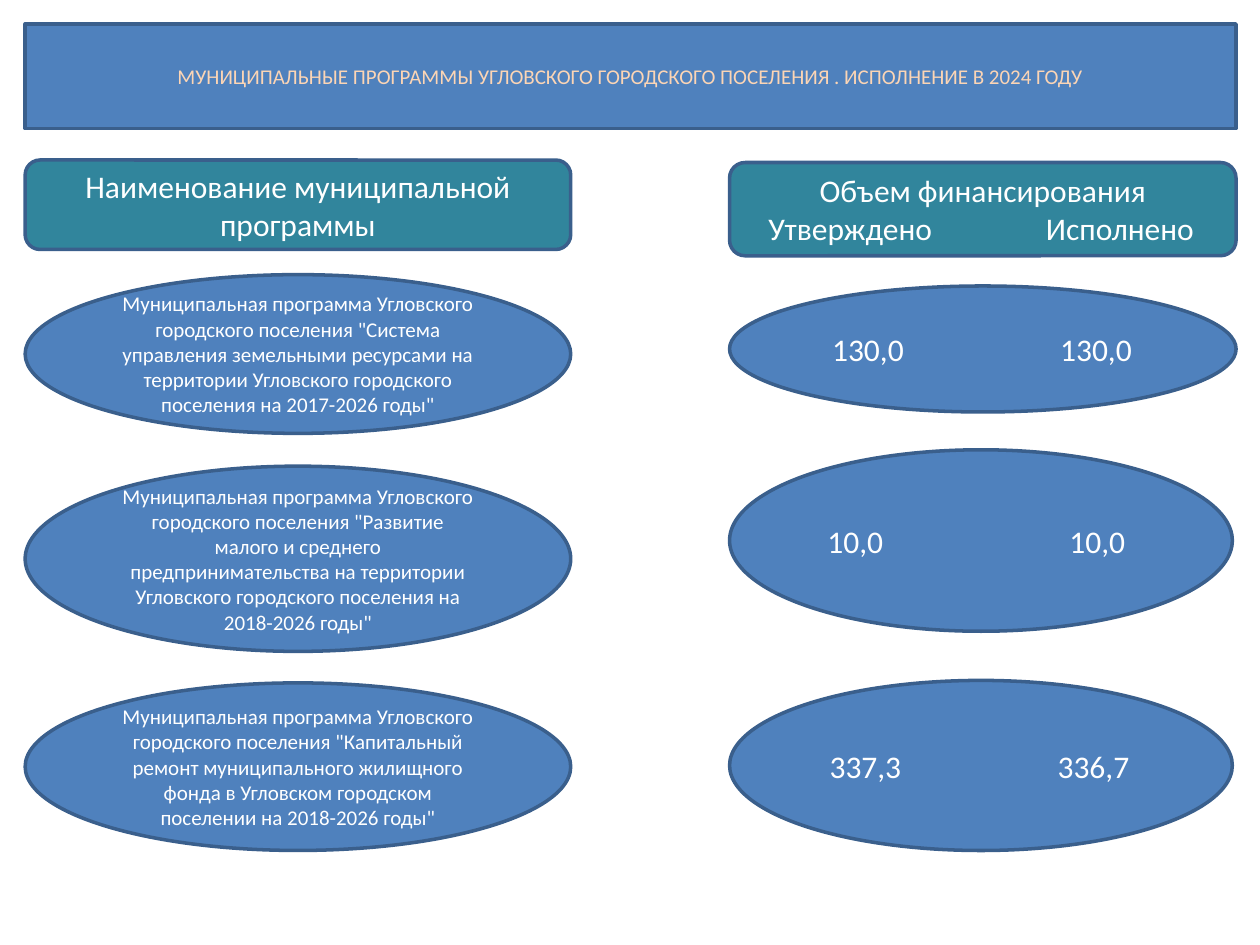
from math import sqrt

from lxml.etree import SubElement
from pptx import Presentation
from pptx.dml.color import RGBColor
from pptx.enum.shapes import MSO_SHAPE
from pptx.enum.text import MSO_ANCHOR, MSO_AUTO_SIZE, PP_ALIGN
from pptx.oxml.ns import qn
from pptx.util import Inches, Pt

COLORS = {
    "blue": "4F81BD",
    "teal": "31859C",
    "outline": "3A5F8C",
    "white": "FFFFFF",
    "peach": "FCD5B5",
}

SLIDE_SIZE = (10, 7.5)
INSET = 0.1
COLUMNS = {"name": (0.2, 4.33), "amount": (5.79, 4.02)}
TITLE = "МУНИЦИПАЛЬНЫЕ ПРОГРАММЫ УГЛОВСКОГО ГОРОДСКОГО ПОСЕЛЕНИЯ . ИСПОЛНЕНИЕ В 2024 ГОДУ"
TITLE_BOX = (0.2, 0.19, 9.61, 0.83)

HEADERS = [
    {"column": "name", "rows": (1.27, 0.71),
     "lines": ["Наименование муниципальной программы"]},
    {"column": "amount", "rows": (1.29, 0.74),
     "lines": ["Объем финансирования", ("Утверждено", "Исполнено")],
     "centers": (6.75, 8.89)},
]

PROGRAM_PREFIX = "Муниципальная программа Угловского городского поселения "
PROGRAMS = [
    {"name": '"Система управления земельными ресурсами на территории '
             'Угловского городского поселения на 2017-2026 годы"',
     "name_rows": (2.18, 1.26), "amounts": ("130,0", "130,0"),
     "amount_rows": (2.27, 1), "centers": (6.89, 8.7), "trim": 0},
    {"name": '"Развитие малого и среднего предпринимательства на территории '
             'Угловского городского поселения на 2018-2026 годы"',
     "name_rows": (3.7, 1.47), "amounts": ("10,0", "10,0"),
     "amount_rows": (3.57, 1.44), "centers": (6.79, 8.71), "trim": 0.03},
    {"name": '"Капитальный ремонт муниципального жилищного фонда '
             'в Угловском городском поселении на 2018-2026 годы"',
     "name_rows": (5.42, 1.33), "amounts": ("337,3", "336,7"),
     "amount_rows": (5.4, 1.35), "centers": (6.87, 8.68), "trim": 0.03},
]


def color(name):
    return RGBColor.from_string(COLORS[name])


def set_center_tabs(paragraph, positions):
    tab_list = SubElement(paragraph._p.get_or_add_pPr(), qn("a:tabLst"))
    for position in positions:
        SubElement(tab_list, qn("a:tab"), pos=str(Inches(position)), algn="ctr")


def style_shape(shape, fill):
    shape.fill.solid()
    shape.fill.fore_color.rgb = color(fill)
    shape.line.color.rgb = color("outline")
    shape.line.width = Pt(2)
    shape.shadow.inherit = False


def write_lines(shape, lines, size, font_color="white", tabs=()):
    frame = shape.text_frame
    frame_format = {"word_wrap": True, "auto_size": MSO_AUTO_SIZE.NONE,
                    "vertical_anchor": MSO_ANCHOR.MIDDLE}
    for attribute, value in frame_format.items():
        setattr(frame, attribute, value)
    for index, line in enumerate(lines):
        paragraph = frame.add_paragraph() if index else frame.paragraphs[0]
        paragraph.alignment = PP_ALIGN.CENTER
        if isinstance(line, tuple):
            paragraph.alignment = PP_ALIGN.LEFT
            set_center_tabs(paragraph, tabs)
            line = "".join(f"\t{part}" for part in line)
        run = paragraph.add_run()
        run.text = line
        for attribute, value in {"name": "Calibri", "size": Pt(size)}.items():
            setattr(run.font, attribute, value)
        run.font.color.rgb = color(font_color)


def add_box(slide, kind, column, rows, lines, size, fill, centers=(), trim=0):
    left, width = COLUMNS[column]
    width -= trim
    top, height = rows
    shape = slide.shapes.add_shape(kind, *map(Inches, (left, top, width, height)))
    style_shape(shape, fill)
    corner = (1 - sqrt(0.5)) * (width / 2 if kind == MSO_SHAPE.OVAL else height / 6)
    tabs = [center - left - corner - INSET for center in centers]
    write_lines(shape, lines, size, tabs=tabs)


def add_title(slide):
    title = slide.shapes.title
    for attribute, value in zip(("left", "top", "width", "height"), TITLE_BOX):
        setattr(title, attribute, Inches(value))
    geometry = SubElement(title._element.spPr, qn("a:prstGeom"), prst="ellipseRibbon")
    SubElement(geometry, qn("a:avLst"))
    style_shape(title, "blue")
    write_lines(title, [TITLE], 12, "peach")


def main():
    presentation = Presentation()
    presentation.slide_width, presentation.slide_height = map(Inches, SLIDE_SIZE)
    slide = presentation.slides.add_slide(presentation.slide_layouts[5])
    add_title(slide)
    for header in HEADERS:
        add_box(slide, MSO_SHAPE.ROUNDED_RECTANGLE, size=18, fill="teal", **header)
    for program in PROGRAMS:
        add_box(slide, MSO_SHAPE.OVAL, "name", program["name_rows"],
                [PROGRAM_PREFIX + program["name"]], 12, "blue")
        add_box(slide, MSO_SHAPE.OVAL, "amount", program["amount_rows"],
                [program["amounts"]], 18, "blue", program["centers"], program["trim"])
    presentation.save("out.pptx")


if __name__ == "__main__":
    main()
